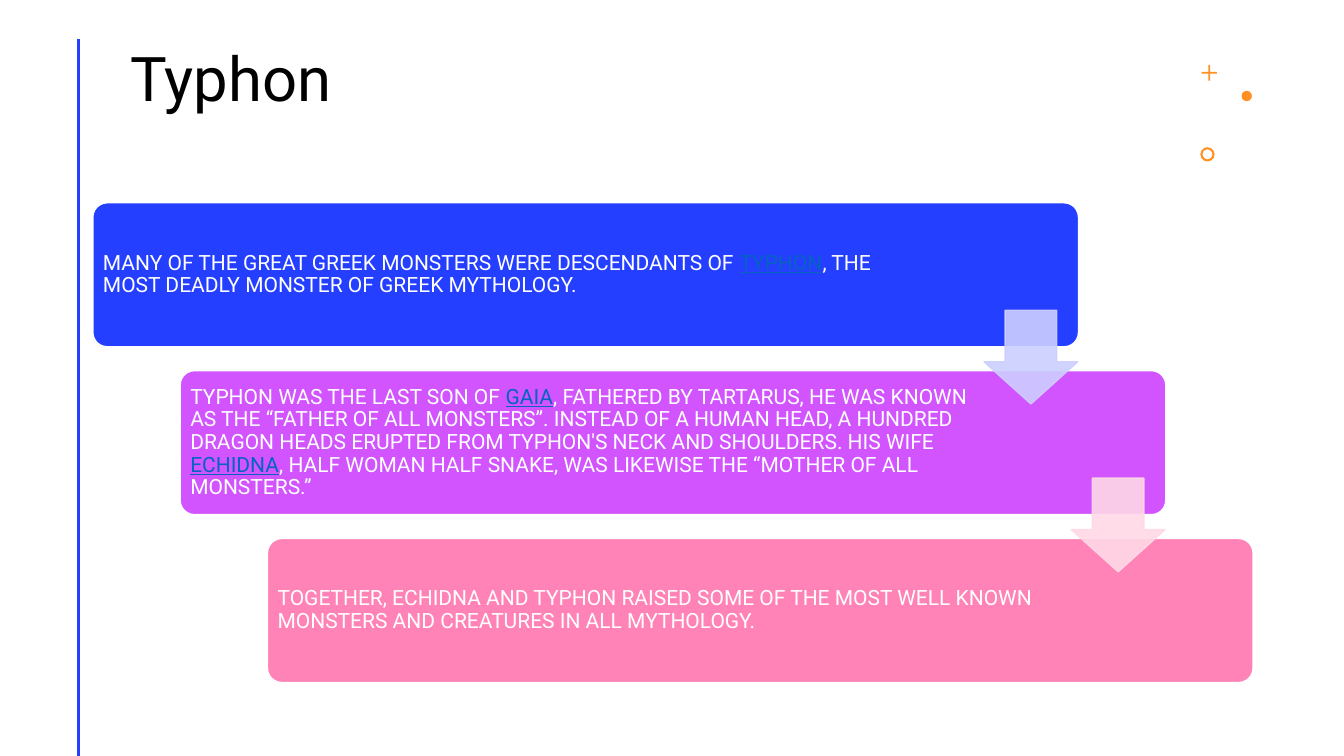
from lxml import etree
from pptx import Presentation, util as u
from pptx.dml.color import RGBColor
from pptx.enum import shapes, text
from pptx.oxml import ns

COLORS = {
    "blue": "243FFF", "purple": "D154FF", "pink": "FF83B6",
    "pale_blue": "CDCFFF", "pale_pink": "FFD9E6", "orange": "FF9022",
    "link": "0563C1", "white": "FFFFFF", "black": "000000",
}
FONT = "Roboto"


def add_filled(kind, box, fill, adjustments=(), outline=None):
    shape = slide.shapes.add_shape(kind, *[u.Cm(value) for value in box])
    shape.shadow.inherit = False
    for index, value in enumerate(adjustments):
        shape.adjustments[index] = value
    shape.fill.solid()
    shape.fill.fore_color.rgb = RGBColor.from_string(COLORS[fill])
    if outline:
        shape.line.color.rgb = RGBColor.from_string(COLORS[outline])
        shape.line.width = u.Pt(1)
    else:
        shape.line.fill.background()
    return shape


def write_text(shape, parts, size, color, frame_format):
    """Every second part is shown as an underlined term."""
    for name, value in frame_format.items():
        setattr(shape.text_frame, name, value)
    paragraph = shape.text_frame.paragraphs[0]
    paragraph.alignment = text.PP_ALIGN.LEFT
    paragraph.line_spacing = 0.9
    for index, part in enumerate(parts):
        run = paragraph.add_run()
        run.text = part
        is_term = index % 2 == 1
        run_format = {"name": FONT, "size": u.Pt(size), "underline": is_term}
        for name, value in run_format.items():
            setattr(run.font, name, value)
        run.font.color.rgb = RGBColor.from_string(COLORS["link" if is_term else color])


presentation = Presentation()
presentation.slide_width = u.Cm(33.87)
presentation.slide_height = u.Cm(19.05)
slide = presentation.slides.add_slide(presentation.slide_layouts[6])

# Title
title = slide.shapes.add_textbox(u.Cm(2.34), u.Cm(1.1), u.Cm(27.33), u.Cm(1.9))
write_text(title, ["Typhon"], 44, "black", {
    "word_wrap": True, "vertical_anchor": text.MSO_ANCHOR.TOP,
    "margin_left": u.Cm(0.94), "margin_top": u.Cm(0.13),
})

# Vertical rule
rule = slide.shapes.add_connector(
    shapes.MSO_CONNECTOR.STRAIGHT, u.Cm(1.98), u.Cm(0.98), u.Cm(1.98), u.Cm(19.04))
rule.line.color.rgb = RGBColor.from_string(COLORS["blue"])
rule.line.width = u.Pt(2)
etree.SubElement(rule._element.spPr, ns.qn("a:effectLst"))

# Corner ornaments
add_filled(shapes.MSO_SHAPE.CROSS, (30.28, 1.64, 0.39, 0.39), "orange", [0.44])
add_filled(shapes.MSO_SHAPE.OVAL, (31.29, 2.29, 0.26, 0.26), "orange")
add_filled(shapes.MSO_SHAPE.DONUT, (30.25, 3.71, 0.36, 0.36), "orange", [0.15])

# Staircase of cards: fill, right margin, text parts
cards = [
    ("blue", 3.9, [
        "MANY OF THE GREAT GREEK MONSTERS WERE DESCENDANTS OF ", "TYPHON",
        ", THE MOST DEADLY MONSTER OF GREEK MYTHOLOGY."]),
    ("purple", 4.72, [
        "TYPHON WAS THE LAST SON OF ", "GAIA",
        ", FATHERED BY TARTARUS, HE WAS KNOWN AS THE “FATHER OF ALL MONSTERS”. "
        "INSTEAD OF A HUMAN HEAD, A HUNDRED DRAGON HEADS ERUPTED FROM TYPHON'S "
        "NECK AND SHOULDERS. HIS WIFE ", "ECHIDNA",
        ", HALF WOMAN HALF SNAKE, WAS LIKEWISE THE “MOTHER OF ALL MONSTERS.”"]),
    ("pink", 4.72, [
        "TOGETHER, ECHIDNA AND TYPHON RAISED SOME OF THE MOST WELL KNOWN "
        "MONSTERS AND CREATURES IN ALL MYTHOLOGY."]),
]
STEP_X, STEP_Y = 2.2, 4.23
for step, (fill, margin_right, parts) in enumerate(cards):
    card = add_filled(
        shapes.MSO_SHAPE.ROUNDED_RECTANGLE,
        (2.34 + step * STEP_X, 5.11 + step * STEP_Y, 24.84, 3.63),
        fill, [0.1], "white")
    write_text(card, parts, 15, "white", {
        "word_wrap": True, "vertical_anchor": text.MSO_ANCHOR.MIDDLE,
        "margin_left": u.Cm(0.15), "margin_right": u.Cm(margin_right),
        "margin_top": u.Cm(0.15), "margin_bottom": u.Cm(0.15),
    })

# Translucent arrows between the cards
for step, fill in enumerate(["pale_blue", "pale_pink"]):
    arrow = add_filled(
        shapes.MSO_SHAPE.DOWN_ARROW,
        (24.8 + step * STEP_X, 7.82 + step * STEP_Y, 2.36, 2.36),
        fill, [0.55, 0.45], fill)
    for color in arrow._element.spPr.iter(ns.qn("a:srgbClr")):
        etree.SubElement(color, ns.qn("a:alpha")).set("val", "90000")

presentation.save("out.pptx")
